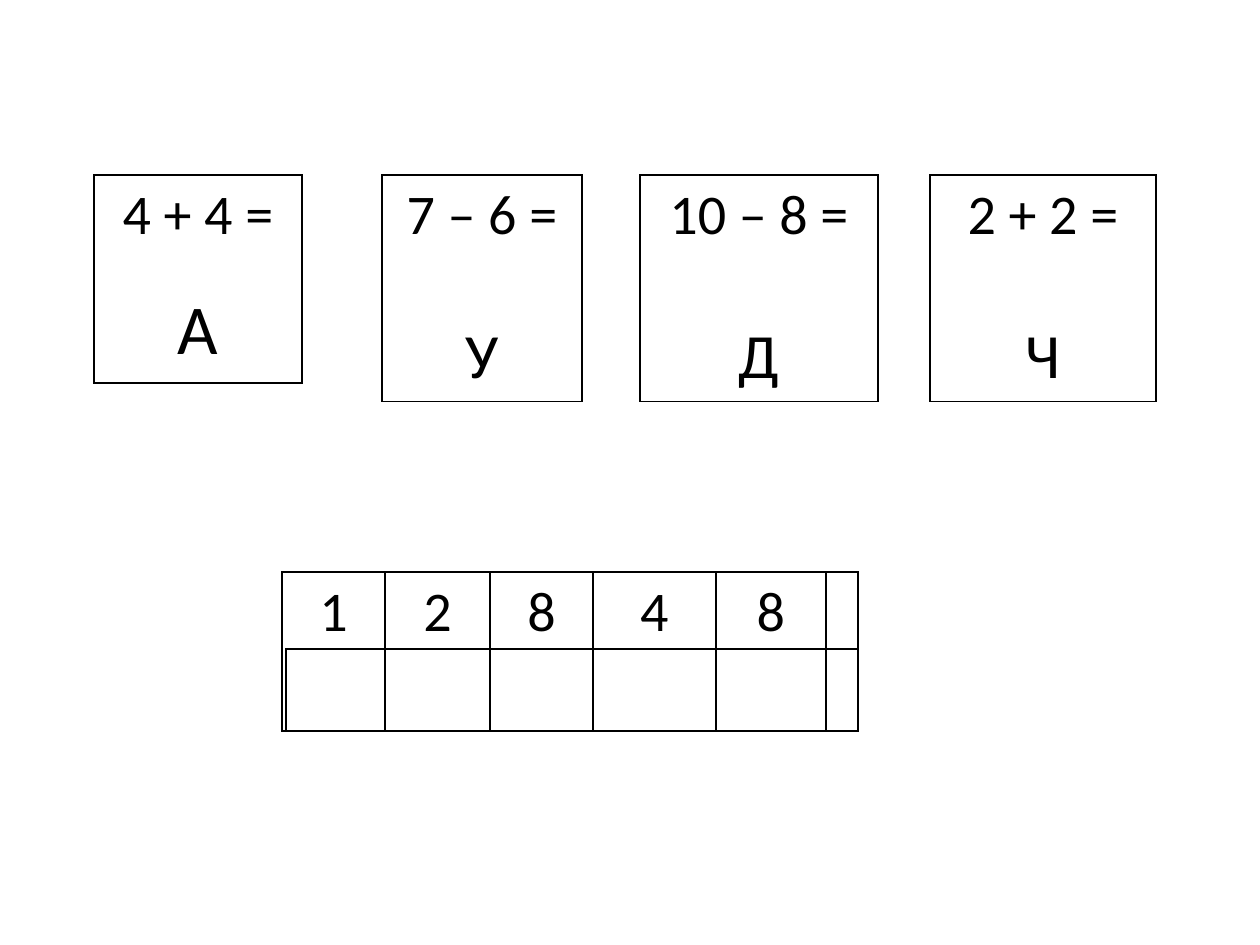
from dataclasses import dataclass

from lxml import etree
from pptx import Presentation
from pptx import util as u
from pptx.dml.color import RGBColor
from pptx.enum import text
from pptx.oxml import ns

PX_PER_INCH = 126
BLACK = RGBColor(0, 0, 0)
FONT = "Calibri"
SUM_SIZE = 32
CARD_TOP = 175
BORDER_WIDTH = u.Pt(1)


@dataclass(frozen=True)
class Card:
    left: int
    width: int
    sum: str
    letter: str
    height: int = 223
    letter_size: int = 36
    gap: int = 39  # points between the sum and the letter


CARDS = [
    Card(382, 200, "7 – 6 =", "У"),
    Card(640, 238, "10 – 8 =", "Д"),
    Card(930, 226, "2 + 2 =", "Ч"),
    Card(94, 208, "4 + 4 =", "А", height=208, letter_size=40, gap=22),
]
CODE = ["1", "2", "8", "4", "8", ""]
CODE_WIDTHS = [103, 105, 103, 123, 110, 32]


def px(length: int) -> u.Emu:
    return u.Inches(length / PX_PER_INCH)


def outline_cell(cell) -> None:
    """Give the cell a black line on each side and no fill."""
    properties = cell._tc.get_or_add_tcPr()
    for side in ("lnL", "lnR", "lnT", "lnB"):
        line = etree.SubElement(properties, ns.qn(f"a:{side}"), w=str(BORDER_WIDTH))
        fill = etree.SubElement(line, ns.qn("a:solidFill"))
        etree.SubElement(fill, ns.qn("a:srgbClr"), val=str(BLACK))
    cell.fill.background()


def add_row(slide, left: int, top: int, widths: list[int], height: int):
    """Add a one-row outlined table and return its cells."""
    frame = slide.shapes.add_table(
        1, len(widths), px(left), px(top), px(sum(widths)), px(height)
    )
    table = frame.table
    table.first_row = False
    table.horz_banding = False
    table.rows[0].height = px(height)
    for column, width in zip(table.columns, widths):
        column.width = px(width)
    cells = list(table.rows[0].cells)
    for cell in cells:
        outline_cell(cell)
    return cells


def format_paragraph(paragraph, size: int) -> None:
    paragraph.alignment = text.PP_ALIGN.CENTER
    for run in paragraph.runs:
        run.font.name = FONT
        run.font.size = u.Pt(size)
        run.font.color.rgb = BLACK


def add_card(slide, card: Card) -> None:
    cell = add_row(slide, card.left, CARD_TOP, [card.width], card.height)[0]
    cell.text_frame.text = f"{card.sum}\n{card.letter}"
    sum_paragraph, letter_paragraph = cell.text_frame.paragraphs
    format_paragraph(sum_paragraph, SUM_SIZE)
    format_paragraph(letter_paragraph, card.letter_size)
    letter_paragraph.space_before = u.Pt(card.gap)


def add_code_grid(slide) -> None:
    cells = add_row(slide, 282, 572, CODE_WIDTHS, 159)
    for cell, digit in zip(cells, CODE):
        if digit:
            cell.text_frame.text = digit
            format_paragraph(cell.text_frame.paragraphs[0], SUM_SIZE)
    add_row(slide, 286, 649, [572], 82)  # answer strip


def main() -> None:
    presentation = Presentation()
    presentation.slide_width = u.Inches(10)
    presentation.slide_height = u.Inches(7.5)
    slide = presentation.slides.add_slide(presentation.slide_layouts[6])
    for card in CARDS:
        add_card(slide, card)
    add_code_grid(slide)
    presentation.save("out.pptx")


if __name__ == "__main__":
    main()
